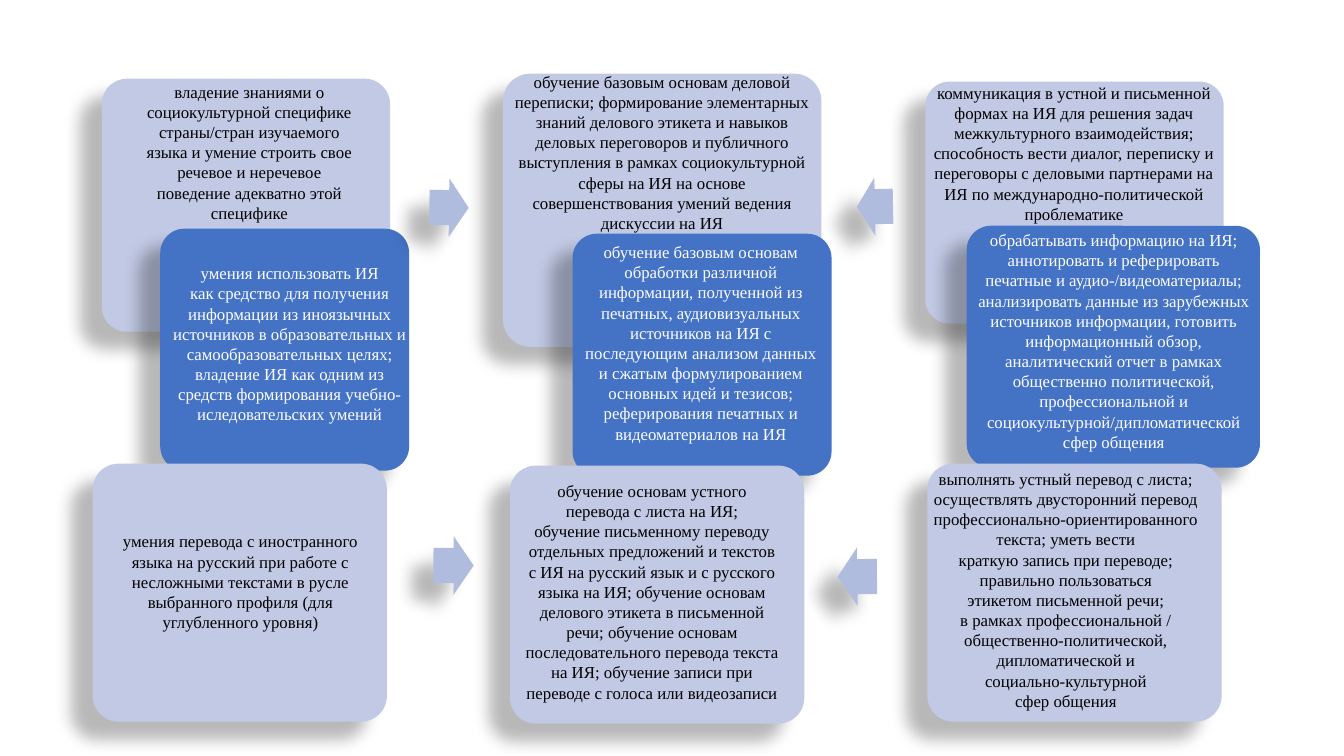
from lxml import etree
from pptx import Presentation
from pptx.dml.color import RGBColor
from pptx.enum.shapes import MSO_SHAPE
from pptx.enum.text import PP_ALIGN
from pptx.oxml.ns import qn
from pptx.util import Pt

CARD, ARROW = MSO_SHAPE.ROUNDED_RECTANGLE, MSO_SHAPE.RIGHT_ARROW
CENTER = PP_ALIGN.CENTER

COLORS = {"pale": "C1C9E4", "blue": "4472C4", "arrow": "B0BCDE",
          "black": "000000", "white": "FFFFFF"}
FONT = {"name": "Times New Roman", "size": Pt(12)}
SHADOW = {"blurRad": Pt(11.8), "dist": Pt(19.7), "dir": 141 * 60000,
          "algn": "tr", "rotWithShape": 0}

# Cards: fill, (left, top, width, height)
UPPER_CARDS = [
    ("pale", (72.7, 56.2, 205.9, 180.7)),
    ("blue", (114.5, 163.4, 177.8, 172.8)),
    ("pale", (359.3, 52.6, 227.5, 195.1)),
    ("blue", (409, 167, 185, 172.8)),
    ("pale", (661, 58.3, 213.1, 172.8)),
    ("blue", (690.5, 161.3, 209.5, 172.8)),
]
LOWER_LEFT, LOWER_STEP = 66.2, 298.1
LOWER_TOPS = [331.2, 332.6, 331.2]
LOWER_SIZE = (210.2, 184.3)

# Arrows: (left, top, width, height), rotation
ARROWS = [
    ((306.7, 127.4, 28.1, 41.8), 0.7),
    ((612, 126.7, 25.9, 41.8), 178.9),
    ((309.6, 383, 28.8, 41.8), 0.2),
    ((598.3, 391, 28.1, 41.8), 179.4),
]

# Texts: colour, (left, top, width, height), paragraphs
UPPER_TEXTS = [
    ("black", (95, 54.7, 166.3, 108.7), [
        "владение знаниями о социокультурной специфике страны/стран "
        "изучаемого языка и умение строить свое речевое и неречевое "
        "поведение адекватно этой специфике"]),
    ("black", (357.8, 47.5, 230.4, 123.8), [
        "обучение базовым основам деловой переписки; формирование "
        "элементарных знаний делового этикета и навыков деловых переговоров "
        "и публичного выступления в рамках социокультурной сферы на ИЯ на "
        "основе совершенствования умений ведения дискуссии на ИЯ"]),
    ("black", (658.1, 55.4, 218.2, 108.7), [
        "коммуникация в устной и письменной формах на ИЯ для решения задач "
        "межкультурного взаимодействия; способность вести диалог, переписку "
        "и переговоры с деловыми партнерами на ИЯ по "
        "международно-политической проблематике"]),
    ("white", (114.5, 184.3, 185, 123.8), [
        "умения использовать ИЯ",
        "как средство для получения",
        "информации из иноязычных",
        "источников в образовательных и самообразовательных целях;",
        "владение ИЯ как одним из",
        "средств формирования учебно-иследовательских умений"]),
    ("white", (408.2, 169.2, 185, 152.6), [
        "обучение базовым основам обработки различной информации, полученной "
        "из печатных, аудиовизуальных источников на ИЯ с последующим "
        "анализом данных и сжатым формулированием основных идей и тезисов;",
        "реферирования печатных и видеоматериалов на ИЯ"]),
    ("white", (690.5, 160.6, 210.2, 189.4), [
        "обрабатывать информацию на ИЯ; аннотировать и реферировать печатные "
        "и аудио-/видеоматериалы; анализировать данные из зарубежных "
        "источников информации, готовить информационный обзор, "
        "аналитический отчет в рамках общественно политической, "
        "профессиональной и социокультурной/дипломатической сфер общения"]),
]
LOWER_TEXTS = [
    ("black", (74.9, 375.8, 193.7, 79.9), [
        "умения перевода с иностранного языка на русский при работе с "
        "несложными текстами в русле выбранного профиля (для углубленного "
        "уровня)"]),
    ("black", (367.9, 339.8, 195.8, 167), [
        "обучение основам устного перевода с листа на ИЯ;",
        "обучение письменному переводу отдельных предложений и текстов с ИЯ "
        "на русский язык и с русского языка на ИЯ; обучение основам делового "
        "этикета в письменной речи; обучение основам последовательного "
        "перевода текста на ИЯ; обучение записи при переводе с голоса или "
        "видеозаписи"]),
    ("black", (635, 331.2, 252.7, 182), [
        "выполнять устный перевод с листа;",
        "осуществлять двусторонний перевод профессионально-ориентированного",
        "текста; уметь вести",
        "краткую запись при переводе;",
        "правильно пользоваться",
        "этикетом письменной речи;",
        "в рамках профессиональной /",
        "общественно-политической,",
        "дипломатической и",
        "социально-культурной",
        "сфер общения"]),
]

prs = Presentation()
prs.slide_width, prs.slide_height = Pt(960), Pt(540)
slide = prs.slides.add_slide(prs.slide_layouts[6])


def add_block(kind, color, box, adjustments, rotation=0):
    s = slide.shapes.add_shape(kind, *map(Pt, box))
    for i, value in enumerate(adjustments):
        s.adjustments[i] = value
    s.rotation = rotation
    s.fill.solid()
    s.fill.fore_color.rgb = RGBColor.from_string(COLORS[color])
    s.line.fill.background()
    # Soft shadow to the lower left
    s.shadow.inherit = False
    effects = s._element.spPr.find(qn("a:effectLst"))
    shadow = etree.SubElement(effects, qn("a:outerShdw"),
                              {k: str(v) for k, v in SHADOW.items()})
    tint = etree.SubElement(shadow, qn("a:srgbClr"), val=COLORS["black"])
    etree.SubElement(tint, qn("a:alpha"), val="28000")


def add_card(color, box):
    add_block(CARD, color, box, [0.1])


def add_arrow(box, rotation):
    add_block(ARROW, "arrow", box, [0.6, 0.5], rotation)


def add_text(color, box, paragraphs):
    tf = slide.shapes.add_textbox(*map(Pt, box)).text_frame
    tf.word_wrap = True
    for i, text in enumerate(paragraphs):
        p = tf.paragraphs[0] if i == 0 else tf.add_paragraph()
        p.alignment = CENTER
        r = p.add_run()
        r.text = text
        for name, value in FONT.items():
            setattr(r.font, name, value)
        r.font.color.rgb = RGBColor.from_string(COLORS[color])


# Upper row: overlapping cards, arrows, texts
for card in UPPER_CARDS:
    add_card(*card)
for arrow in ARROWS[:2]:
    add_arrow(*arrow)
for text in UPPER_TEXTS:
    add_text(*text)

# Lower row: equal cards at an even step, arrows, texts
for col, top in enumerate(LOWER_TOPS):
    add_card("pale", (LOWER_LEFT + col * LOWER_STEP, top, *LOWER_SIZE))
for arrow in ARROWS[2:]:
    add_arrow(*arrow)
for text in LOWER_TEXTS:
    add_text(*text)

prs.save("out.pptx")
